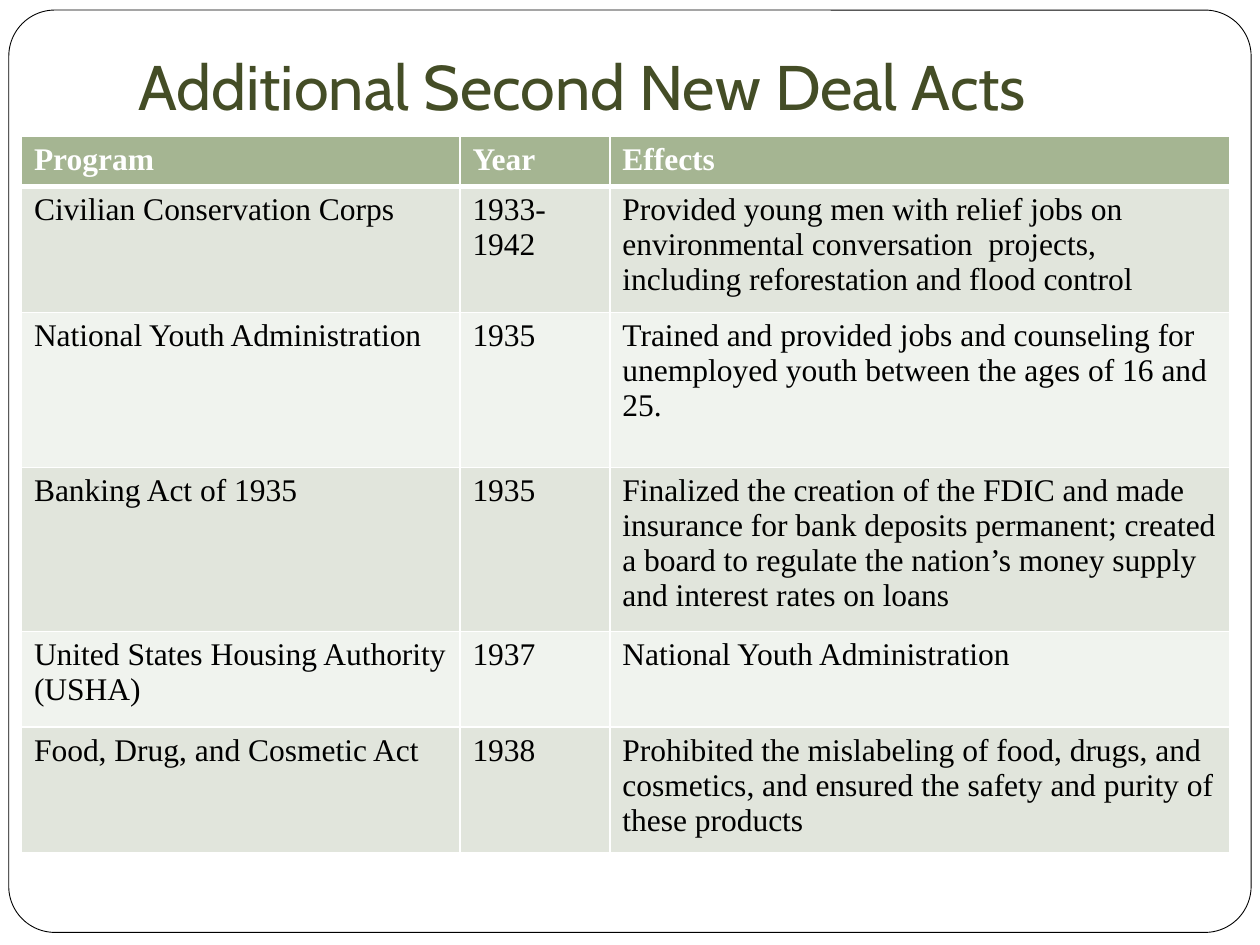
"""Build a slide with a table of additional Second New Deal acts."""
from lxml import etree
from pptx import Presentation
from pptx.dml.color import RGBColor
from pptx.enum import shapes, text
from pptx.oxml import ns
from pptx.util import Inches, Pt

TITLE = "Additional Second New Deal Acts"
ROWS = [
    ("Program", "Year", "Effects"),
    ("Civilian Conservation Corps", "1933-1942",
     "Provided young men with relief jobs on environmental conversation  projects, "
     "including reforestation and flood control"),
    ("National Youth Administration", "1935",
     "Trained and provided jobs and counseling for unemployed youth between the ages of 16 and 25."),
    ("Banking Act of 1935", "1935",
     "Finalized the creation of the FDIC and made insurance for bank deposits permanent; "
     "created a board to regulate the nation’s money supply and interest rates on loans"),
    ("United States Housing Authority (USHA)", "1937", "National Youth Administration"),
    ("Food, Drug, and Cosmetic Act", "1938",
     "Prohibited the mislabeling of food, drugs, and cosmetics, "
     "and ensured the safety and purity of these products"),
]
COL_WIDTHS = [3.48, 1.19, 4.92]
ROW_HEIGHTS = [0.37, 0.93, 1.23, 1.21, 0.76, 0.93]
HEADER, BANDS = "A5B592", ("F0F3EE", "E1E5DC")
WHITE, BLACK, OLIVE = "FFFFFF", "000000", "444D26"


def rgb(value):
    return RGBColor.from_string(value)


def style(p, font, size, color, bold=False):
    p.font.name, p.font.size, p.font.bold = font, Pt(size), bold
    p.font.color.rgb = rgb(color)


def add_border(cell, side, width):
    ln = etree.SubElement(cell._tc.get_or_add_tcPr(), ns.qn(f"a:ln{side}"), w=str(Pt(width)))
    fill = etree.SubElement(ln, ns.qn("a:solidFill"))
    etree.SubElement(fill, ns.qn("a:srgbClr"), val=WHITE)


def add_frame(s):
    sp = s.shapes.add_shape(shapes.MSO_SHAPE.ROUNDED_RECTANGLE,
                            Inches(0.07), Inches(0.08), Inches(9.86), Inches(7.32))
    sp.adjustments[0] = 0.05
    sp.shadow.inherit = False
    sp.fill.solid()
    sp.fill.fore_color.rgb = rgb(WHITE)
    sp.line.color.rgb = rgb(BLACK)
    sp.line.width = Pt(0.5)


def add_title(s):
    tf = s.shapes.add_textbox(Inches(1), Inches(0.3), Inches(8.5), Inches(0.78)).text_frame
    tf.word_wrap = True
    tf.vertical_anchor = text.MSO_ANCHOR.BOTTOM
    tf.margin_bottom = Inches(0.1)
    tf.text = TITLE
    style(tf.paragraphs[0], "Cabin", 36, OLIVE)


def add_acts_table(s):
    table = s.shapes.add_table(len(ROWS), len(COL_WIDTHS), Inches(0.17), Inches(1.08),
                               Inches(sum(COL_WIDTHS)), Inches(sum(ROW_HEIGHTS))).table
    for col, width in zip(table.columns, COL_WIDTHS):
        col.width = Inches(width)
    for i, (row, height, values) in enumerate(zip(table.rows, ROW_HEIGHTS, ROWS)):
        row.height = Inches(height)
        header = i == 0
        for cell, value in zip(row.cells, values):
            cell.text = value
            style(cell.text_frame.paragraphs[0], "Times New Roman", 18,
                  WHITE if header else BLACK, header)
            for side in "LRTB":
                heavy = (i, side) in ((0, "B"), (1, "T"))
                add_border(cell, side, 3 if heavy else 1)
            cell.fill.solid()
            cell.fill.fore_color.rgb = rgb(HEADER if header else BANDS[i % 2])


prs = Presentation()
prs.slide_width, prs.slide_height = Inches(10), Inches(7.5)
s = prs.slides.add_slide(prs.slide_layouts[6])
add_frame(s)
add_title(s)
add_acts_table(s)
prs.save("out.pptx")
